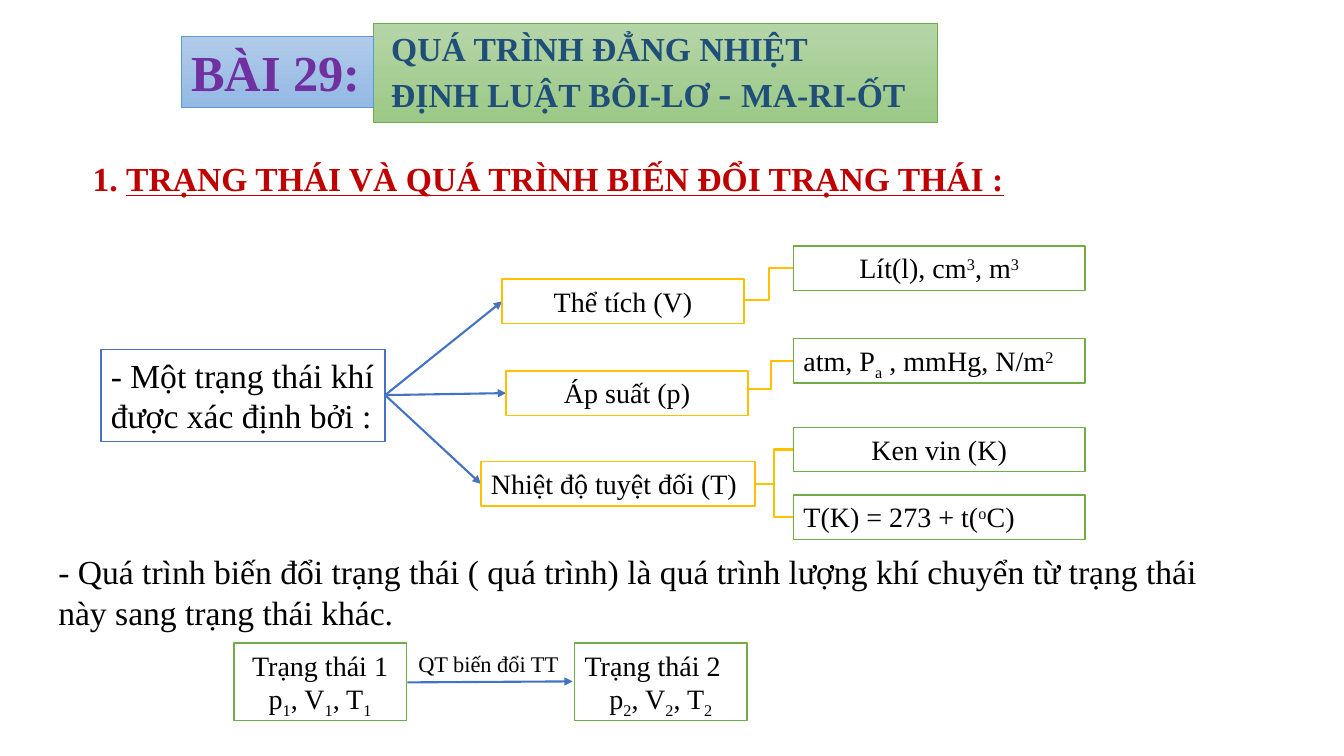
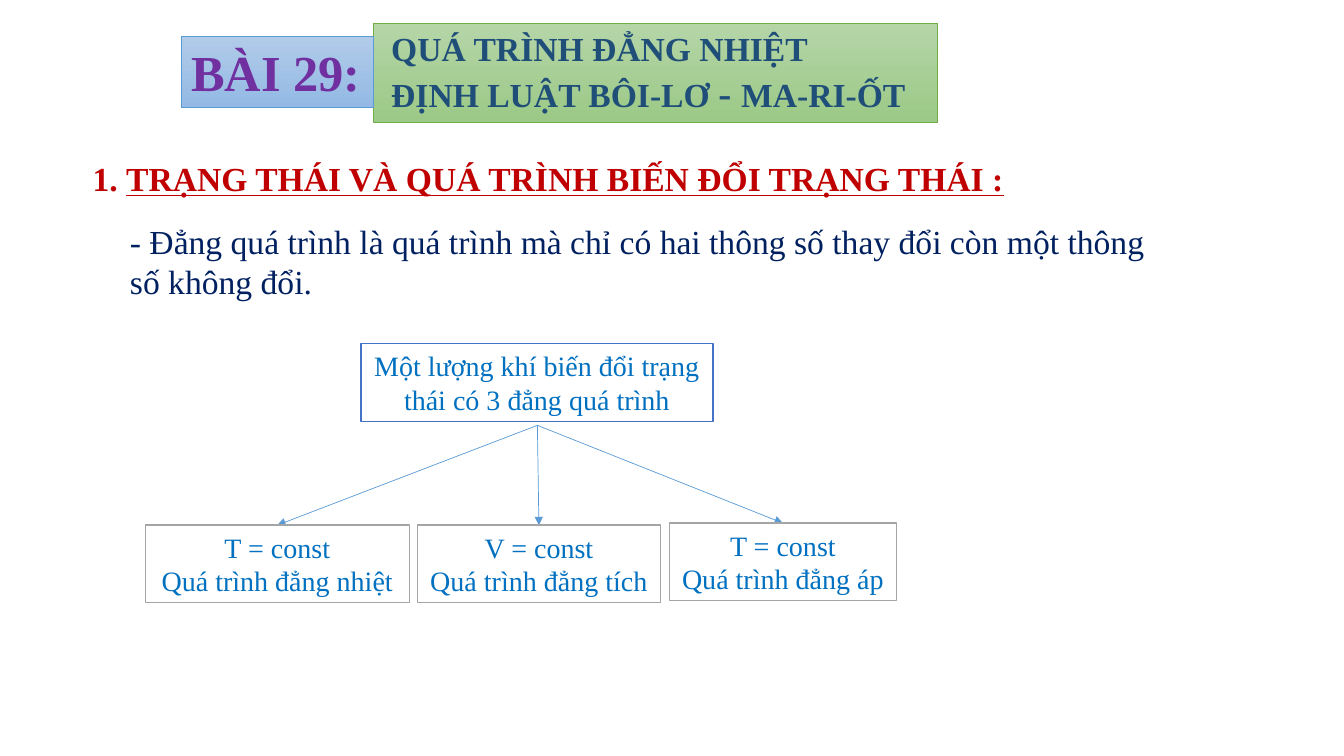
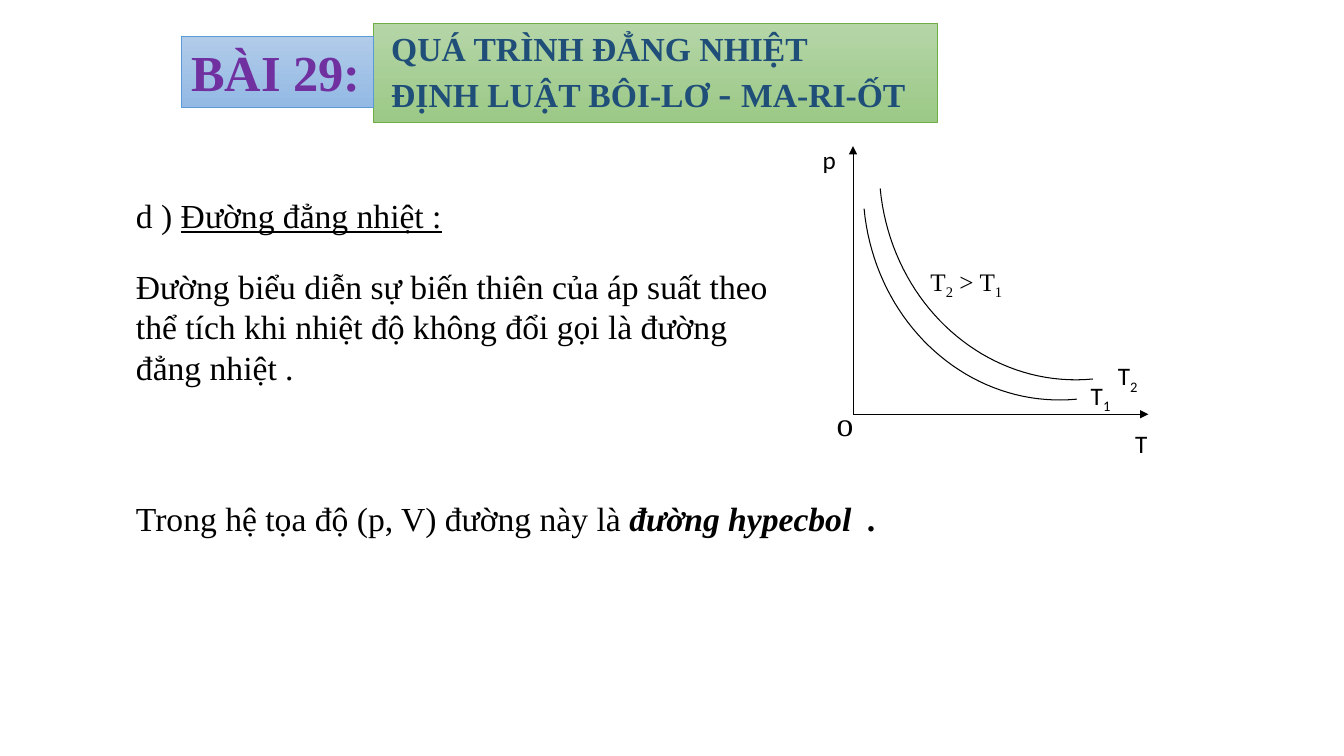
from lxml.etree import SubElement
from pptx import Presentation
from pptx.dml.color import RGBColor
from pptx.enum.shapes import MSO_CONNECTOR, MSO_SHAPE
from pptx.enum.text import MSO_ANCHOR, PP_ALIGN
from pptx.oxml.ns import qn
from pptx.util import Inches, Pt

rgb = RGBColor.from_string
LEFT, CENTER = PP_ALIGN.LEFT, PP_ALIGN.CENTER
STRAIGHT, ELBOW = MSO_CONNECTOR.STRAIGHT, MSO_CONNECTOR.ELBOW
SERIF, SANS = "Times New Roman", "Calibri"
BLACK, BLUE, GOLD, GREEN = "000000", "4472C4", "FFC000", "70AD47"
SKY, GRAY, AZURE = "5B9BD5", "A5A5A5", "0070C0"
SUB, SUP = {"baseline": -25000}, {"baseline": 30000}


def add_text(s, box, paras, size=24, color=BLACK, font=SERIF, align=LEFT,
             bold=None, line=None, weight=1, fill=("FFFFFF",)):
    """Text box, or a filled rectangle if a line colour is given.

    Each paragraph is a list of runs: a string or (string, format dict).
    """
    box = [Inches(v) for v in box]
    if line:
        sp = s.shapes.add_shape(MSO_SHAPE.RECTANGLE, *box)
        sp.shadow.inherit = False
        sp.line.color.rgb = rgb(line)
        sp.line.width = Pt(weight)
        if len(fill) == 1:
            sp.fill.solid()
            sp.fill.fore_color.rgb = rgb(fill[0])
        else:
            sp.fill.gradient()
            sp.fill.gradient_angle = 270
            for stop, c in zip(sp.fill.gradient_stops, fill):
                stop.color.rgb = rgb(c)
    else:
        sp = s.shapes.add_textbox(*box)
    tf = sp.text_frame
    tf.word_wrap = True
    tf.vertical_anchor = MSO_ANCHOR.TOP
    for i, runs in enumerate(paras):
        p = tf.add_paragraph() if i else tf.paragraphs[0]
        p.alignment = align
        for run in runs:
            text, extra = (run, {}) if isinstance(run, str) else run
            r = p.add_run()
            r.text = text
            r.font.color.rgb = rgb(color)
            fmt = {"name": font, "size": Pt(size), "bold": bold, **extra}
            for key, value in fmt.items():
                if key == "baseline":
                    r.font._element.set(key, str(value))
                else:
                    setattr(r.font, key, value)
    return sp


def add_line(s, start, end, color, width, kind=STRAIGHT):
    """Elbow line, or straight arrow."""
    cx = s.shapes.add_connector(kind, *[Inches(v) for v in (*start, *end)])
    cx.line.color.rgb = rgb(color)
    cx.line.width = Pt(width)
    if kind == STRAIGHT:
        SubElement(cx.line._get_or_add_ln(), qn("a:tailEnd"), type="triangle")
    SubElement(cx._element.spPr, qn("a:effectLst"))


prs = Presentation()
prs.slide_width, prs.slide_height = Inches(13.33), Inches(7.5)

# Shared lesson banner and section heading
slides = []
for has_heading in (True, True, False):
    s = prs.slides.add_slide(prs.slide_layouts[6])
    slides.append(s)
    sp = add_text(s, (3.7, 0.23, 5.6, 0.98),
                  [["QUÁ TRÌNH ĐẲNG NHIỆT"],
                   ["ĐỊNH LUẬT BÔI-LƠ ", ("- ", {"size": Pt(28)}), "MA-RI-ỐT"]],
                  color="1F4E79", bold=True, line=GREEN, weight=0.5,
                  fill=("B5D5A7", "9CC987"))
    sp.text_frame.margin_left = Inches(0.18)
    add_text(s, (1.8, 0.36, 1.9, 0.71), [["BÀI 29:"]], size=36, color="7030A0",
             bold=True, line=SKY, weight=0.5, fill=("B1CBE9", "93B9E4"))
    if has_heading:
        add_text(s, (0.82, 1.52, 9.5, 0.5),
                 [["1. ", ("TRẠNG THÁI VÀ QUÁ TRÌNH BIẾN ĐỔI TRẠNG THÁI :",
                           {"underline": True})]], color="C00000", bold=True)

# Slide 1: state quantities and their units
s = slides[0]
add_text(s, (1, 3.47, 2.82, 0.91),
         [["- Một trạng thái khí được xác định bởi :"]], line=BLUE)
for x, y, w, label, align in [
        (4.98, 2.77, 2.4, "Thể tích (V)", CENTER),
        (5.02, 3.68, 2.4, "Áp suất (p)", CENTER),
        (4.77, 4.58, 2.72, "Nhiệt độ tuyệt đối (T)", LEFT)]:
    add_line(s, (3.82, 3.92), (x, y + 0.22), BLUE, 1.5)
    add_text(s, (x, y, w, 0.44), [[label]], size=20, align=align, line=GOLD)

for y, start, align, runs in [
        (2.44, (7.38, 2.98), CENTER, ["Lít(l), cm", ("3", SUP), ", m", ("3", SUP)]),
        (3.36, (7.42, 3.86), LEFT,
         ["atm, P", ("a", SUB), " , mmHg, N/m", ("2", SUP)]),
        (4.24, (7.49, 4.8), CENTER, ["Ken vin (K)"]),
        (4.91, (7.49, 4.8), LEFT, ["T(K) = 273 + t(", ("o", SUP), "C)"])]:
    add_line(s, start, (7.87, y + 0.22), GOLD, 1.5, ELBOW)
    add_text(s, (7.87, y, 2.89, 0.44), [runs], size=20, align=align, line=GREEN)

# Slide 1: change of state
add_text(s, (0.48, 5.42, 11.66, 0.91),
         [["- Quá trình biến đổi trạng thái ( quá trình) là quá trình lượng khí "
           "chuyển từ trạng thái này sang trạng thái khác."]])
for n, x, align in (("1", 2.32, CENTER), ("2", 5.7, LEFT)):
    values = [run for v in ("p", ", V", ", T") for run in (v, (n, SUB))]
    sp = add_text(s, (x, 6.38, 1.71, 0.77), [["Trạng thái " + n], values],
                  size=20, align=CENTER, line=GREEN)
    sp.text_frame.paragraphs[0].alignment = align
add_line(s, (4.04, 6.77), (5.68, 6.76), BLUE, 1.5)
add_text(s, (4.05, 6.4, 1.65, 0.37), [["QT biến đổi TT"]], size=16)

# Slide 2: the three processes
s = slides[1]
add_text(s, (1.19, 2.14, 10.42, 0.91),
         [["- Đẳng quá trình là quá trình mà chỉ có hai thông số thay đổi còn "
           "một thông số không đổi."]], color="002060")
add_text(s, (3.58, 3.41, 3.49, 0.77),
         [["Một lượng khí biến đổi trạng thái có 3 đẳng quá trình"]],
         size=20, color=AZURE, align=CENTER, line=BLUE)
for x, y, w, constant, process in [
        (1.44, 5.21, 2.62, "T", "nhiệt"),
        (4.14, 5.21, 2.41, "V", "tích"),
        (6.64, 5.19, 2.25, "T", "áp")]:
    add_line(s, (5.33, 4.22), (x + w / 2, y), SKY, 0.5)
    add_text(s, (x, y, w, 0.77),
             [[constant + " = const"], ["Quá trình đẳng " + process]],
             size=20, color=AZURE, align=CENTER, line=GRAY)

# Slide 3: text
s = slides[2]
add_text(s, (1.25, 1.88, 3.84, 0.5),
         [["d ) ", ("Đường đẳng nhiệt :", {"underline": True})]])
add_text(s, (1.25, 2.59, 6.52, 1.31),
         [["Đường biểu diễn sự biến thiên của áp suất theo thể tích khi nhiệt độ "
           "không đổi gọi là đường đẳng nhiệt ."]])
add_text(s, (1.25, 4.89, 8.29, 0.5),
         [["Trong hệ tọa độ (p, V) đường này là ",
           ("đường hypecbol  .", {"bold": True, "italic": True})]])

# Slide 3: axes
for end in ((8.46, 1.45), (11.39, 4.11)):
    add_line(s, (8.46, 4.11), end, BLACK, 0.5)

# Slide 3: isotherms, one Bezier curve shifted for each temperature
curve = [(10.68, 3.96), (9.62, 4.06), (8.68, 3.22), (8.57, 2.07)]
STEPS = 40
for dx, dy in ((0, 0), (0.16, -0.2)):
    points = []
    for i in range(STEPS + 1):
        t = i / STEPS
        weights = ((1 - t) ** 3, 3 * t * (1 - t) ** 2, 3 * t * t * (1 - t), t ** 3)
        x, y = (sum(k * c for k, c in zip(weights, axis)) for axis in zip(*curve))
        points.append((Inches(x + dx), Inches(y + dy)))
    fb = s.shapes.build_freeform(*points[0])
    fb.add_line_segments(points[1:], close=False)
    sp = fb.convert_to_shape()
    sp.shadow.inherit = False
    sp.fill.background()
    sp.line.color.rgb = rgb(BLACK)
    sp.line.width = Pt(0.75)

# Slide 3: graph labels
for box, runs, size, font in [
        ((10.72, 3.72, 0.67, 0.5), ["T", ("1", SUB)], 18, SANS),
        ((10.99, 3.53, 0.67, 0.5), ["T", ("2", SUB)], 18, SANS),
        ((9.13, 2.59, 1.15, 0.4), ["T", ("2", SUB), " > T", ("1", SUB)], 18, SERIF),
        ((8.2, 3.95, 0.37, 0.5), ["o"], 24, SERIF),
        ((8.06, 1.38, 0.32, 0.4), ["p"], 18, SANS),
        ((11.16, 4.2, 0.32, 0.4), ["T"], 18, SANS)]:
    add_text(s, box, [runs], size=size, font=font)

prs.save("out.pptx")
